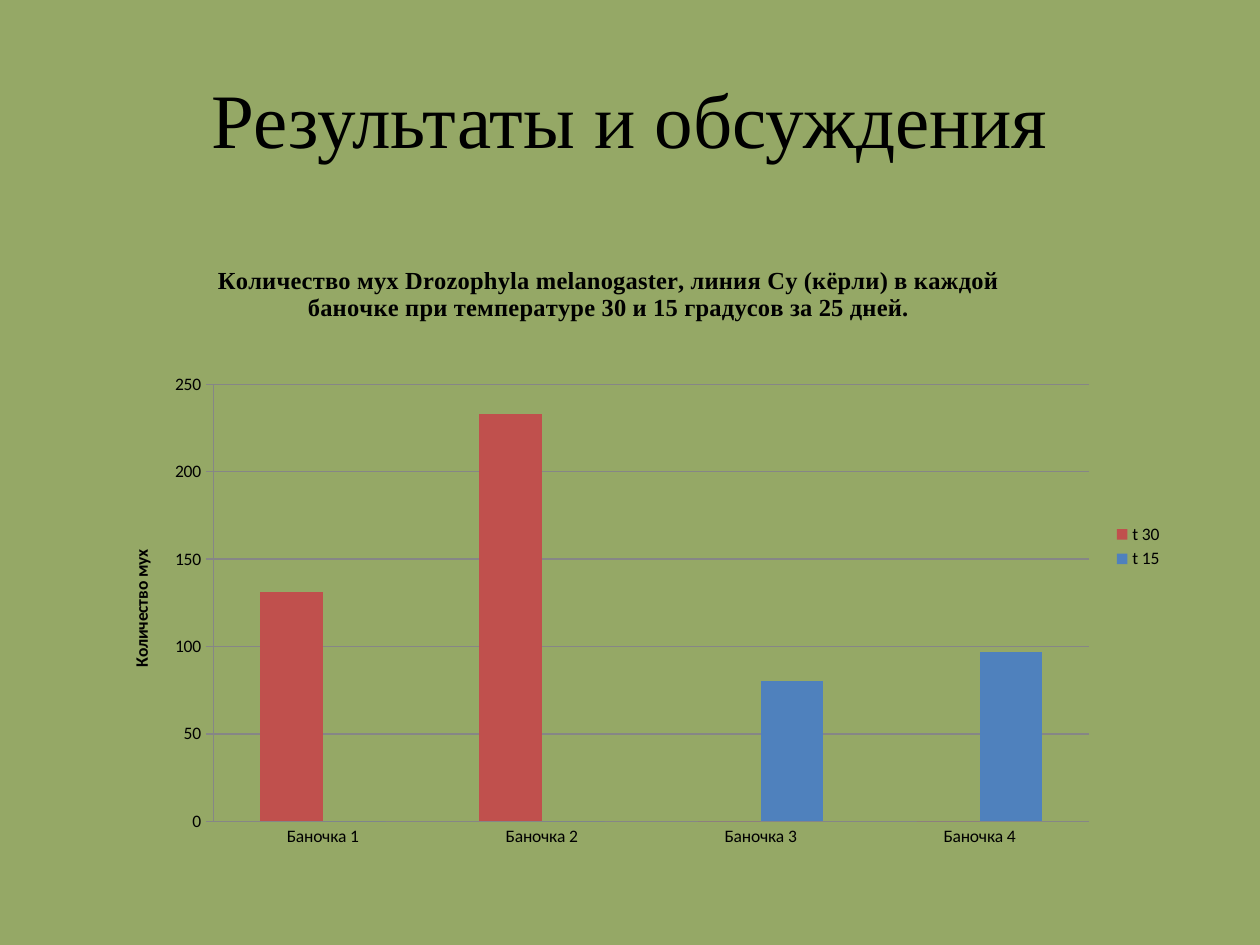
import pptx
import pptx.chart.data
import pptx.dml.color
import pptx.enum.chart
import pptx.enum.text
import pptx.oxml
import pptx.oxml.ns
import pptx.util

RGB = pptx.dml.color.RGBColor
GREEN = RGB(0x95, 0xA8, 0x66)
BLACK = RGB(0x00, 0x00, 0x00)
GREY = RGB(0x86, 0x86, 0x86)
RED = RGB(0xC0, 0x50, 0x4D)
BLUE = RGB(0x4F, 0x81, 0xBD)
SERIF = "Times New Roman"
SANS = "Calibri"


class Deck:
    """Holds the presentation, its style and the current slide."""

    def __init__(self, width, height):
        self.prs = pptx.Presentation()
        self.prs.slide_width = pptx.util.Inches(width)
        self.prs.slide_height = pptx.util.Inches(height)

    def add_slide(self, color):
        self.s = self.prs.slides.add_slide(self.prs.slide_layouts[6])
        self.s.background.fill.solid()
        self.s.background.fill.fore_color.rgb = color

    def box(self, x, y, w, h):
        """Turn shares of the slide into lengths."""
        sw, sh = self.prs.slide_width, self.prs.slide_height
        return int(x * sw), int(y * sh), int(w * sw), int(h * sh)

    def style(self, font, size, name, bold=False):
        font.size, font.name, font.bold = pptx.util.Pt(size), name, bold
        font.color.rgb = BLACK

    def run(self, p, text, size, name, bold=False):
        r = p.add_run()
        r.text = text
        self.style(r.font, size, name, bold)

    def text(self, share, text, size, name):
        tf = self.s.shapes.add_textbox(*self.box(*share)).text_frame
        tf.word_wrap = True
        tf.vertical_anchor = pptx.enum.text.MSO_ANCHOR.MIDDLE
        p = tf.paragraphs[0]
        p.alignment = pptx.enum.text.PP_ALIGN.CENTER
        self.run(p, text, size, name)

    def layout(self, element, after, **shares):
        """Place a chart part by shares of the chart's size."""
        target = '<c:layoutTarget val="inner"/>' if "w" in shares else ""
        modes = "".join(f'<c:{k}Mode val="edge"/>' for k in "xy")
        sizes = "".join(f'<c:{k} val="{v}"/>' for k, v in shares.items())
        xml = (f'<c:layout {pptx.oxml.ns.nsdecls("c")}><c:manualLayout>'
               f'{target}{modes}{sizes}</c:manualLayout></c:layout>')
        for old in element.findall(pptx.oxml.ns.qn("c:layout")):
            element.remove(old)
        new = pptx.oxml.parse_xml(xml)
        if after is None:
            element.insert(0, new)
        else:
            element.find(pptx.oxml.ns.qn(after)).addnext(new)

    def line(self, fmt):
        fmt.line.color.rgb = GREY
        fmt.line.width = pptx.util.Pt(0.75)

    def column_chart(self, share, cats, series, title, axis_title):
        data = pptx.chart.data.CategoryChartData()
        data.categories = cats
        for name, values, _ in series:
            data.add_series(name, values)
        kind = pptx.enum.chart.XL_CHART_TYPE.COLUMN_CLUSTERED
        chart = self.s.shapes.add_chart(kind, *self.box(*share), data).chart
        self.style(chart.font, 10, SANS)

        # Columns
        plot = chart.plots[0]
        plot.gap_width, plot.overlap, plot.vary_by_categories = 150, 0, False
        for ser, (_, _, color) in zip(plot.series, series):
            ser.format.fill.solid()
            ser.format.fill.fore_color.rgb = color

        # Axes
        ticks = pptx.enum.chart.XL_TICK_MARK
        cat, val = chart.category_axis, chart.value_axis
        cat.major_tick_mark, val.major_tick_mark = ticks.NONE, ticks.CROSS
        val.minimum_scale, val.maximum_scale, val.major_unit = 0, 250, 50
        val.has_major_gridlines = True
        for part in (cat, val, val.major_gridlines):
            self.line(part.format)

        # Titles and legend
        chart.has_title = val.has_title = True
        for part, text, size, name in ((chart.chart_title, title, 14, SERIF),
                                       (val.axis_title, axis_title, 10, SANS)):
            self.run(part.text_frame.paragraphs[0], text, size, name, True)
        chart.chart_title.include_in_layout = False
        chart.has_legend = True
        chart.legend.position = pptx.enum.chart.XL_LEGEND_POSITION.RIGHT
        chart.legend.include_in_layout = False

        # Places inside the chart
        area = chart.plots[0]._element.getparent()
        self.layout(area, None, x=0.11, y=0.24, w=0.81, h=0.7)
        self.layout(chart.chart_title._element, "c:tx", x=0.11, y=0.04)
        self.layout(val.axis_title._element, "c:tx", x=0.03, y=0.5)


def main():
    deck = Deck(10, 7.5)
    deck.add_slide(GREEN)
    # Heading
    deck.text((0.05, 0.04, 0.9, 0.17), "Результаты и обсуждения", 44, SERIF)
    # Fly counts
    deck.column_chart(
        (0.075, 0.248, 0.858, 0.661),
        [f"Баночка {n}" for n in range(1, 5)],
        [("t 30", (131, 233, 0, 0), RED), ("t 15", (0, 0, 80, 97), BLUE)],
        "Количество мух Drozophyla melanogaster, линия Су (кёрли) в каждой "
        "баночке при температуре 30 и 15 градусов за 25 дней.",
        "Количество мух")
    deck.prs.save("out.pptx")


if __name__ == "__main__":
    main()
